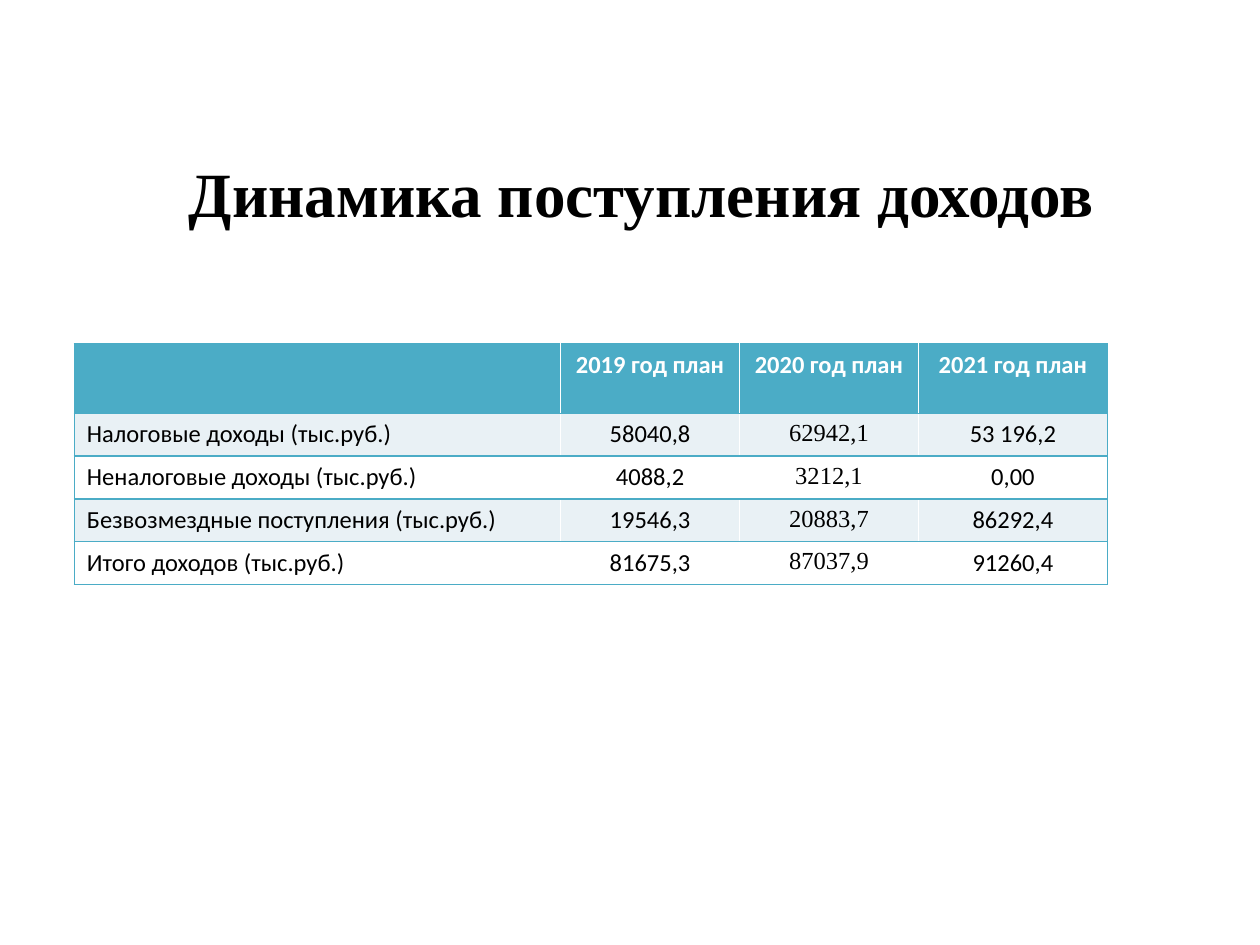
"""Build a slide with a table of planned budget revenue by year."""
from lxml import etree
from pptx import Presentation
from pptx.dml.color import RGBColor
from pptx.enum.text import MSO_ANCHOR, PP_ALIGN
from pptx.oxml.ns import qn
from pptx.util import Inches, Pt

TOP = MSO_ANCHOR.TOP
LEFT, CENTER = PP_ALIGN.LEFT, PP_ALIGN.CENTER
TEAL = RGBColor(0x4B, 0xAC, 0xC6)
BAND = RGBColor(0xE9, 0xF1, 0xF5)
WHITE = RGBColor(0xFF, 0xFF, 0xFF)
BLACK = RGBColor(0x00, 0x00, 0x00)
SANS, SERIF = "Calibri", "Times New Roman"

ROWS = [
    ["", "2019 год план", "2020 год план", "2021 год план"],
    ["Налоговые доходы (тыс.руб.)", "58040,8", "62942,1", "53 196,2"],
    ["Неналоговые доходы (тыс.руб.)", "4088,2", "3212,1", "0,00"],
    ["Безвозмездные поступления (тыс.руб.)", "19546,3", "20883,7", "86292,4"],
    ["Итого доходов (тыс.руб.)", "81675,3", "87037,9", "91260,4"],
]
COLS = [3.86, 1.42, 1.42, 1.5]
HEIGHTS = [0.55] + [0.34] * 4
X = 0.59


def write(p, text, align, color, **font):
    p.alignment = align
    r = p.add_run()
    r.text = text
    r.font.color.rgb = color
    for name, value in font.items():
        setattr(r.font, name, value)


def set_borders(cell, sides):
    tcPr = cell._tc.get_or_add_tcPr()
    for i, side in enumerate(sides):
        ln = etree.Element(qn(f"a:ln{side}"), w=str(Pt(1)))
        fill = etree.SubElement(ln, qn("a:solidFill"))
        etree.SubElement(fill, qn("a:srgbClr"), val=str(TEAL))
        tcPr.insert(i, ln)


prs = Presentation()
prs.slide_width, prs.slide_height = Inches(10), Inches(7.5)
s = prs.slides.add_slide(prs.slide_layouts[6])

sp = s.shapes.add_table(len(ROWS), len(COLS), Inches(X), Inches(2.73),
                        Inches(sum(COLS)), Inches(sum(HEIGHTS)))
tbl = sp.table
for col, width in zip(tbl.columns, COLS):
    col.width = Inches(width)
for row, height in zip(tbl.rows, HEIGHTS):
    row.height = Inches(height)

for i, row in enumerate(ROWS):
    head = i == 0
    for j, text in enumerate(row):
        cell = tbl.cell(i, j)
        cell.fill.solid()
        cell.fill.fore_color.rgb = TEAL if head else BAND if i % 2 else WHITE
        set_borders(cell, {0: "LTB", 3: "RTB"}.get(j, "TB"))
        if text:
            write(cell.text_frame.paragraphs[0], text, CENTER if j else LEFT,
                  WHITE if head else BLACK, size=Pt(14), bold=head,
                  name=SERIF if j == 2 and not head else SANS)

sp = s.shapes.add_textbox(Inches(X), Inches(1.23), Inches(9), Inches(1.25))
tf = sp.text_frame
for name, value in {"word_wrap": True, "vertical_anchor": TOP, "margin_top": 0}.items():
    setattr(tf, name, value)
write(tf.paragraphs[0], "Динамика поступления доходов", CENTER, BLACK,
      size=Pt(36), bold=True, name=SERIF)

prs.save("out.pptx")
